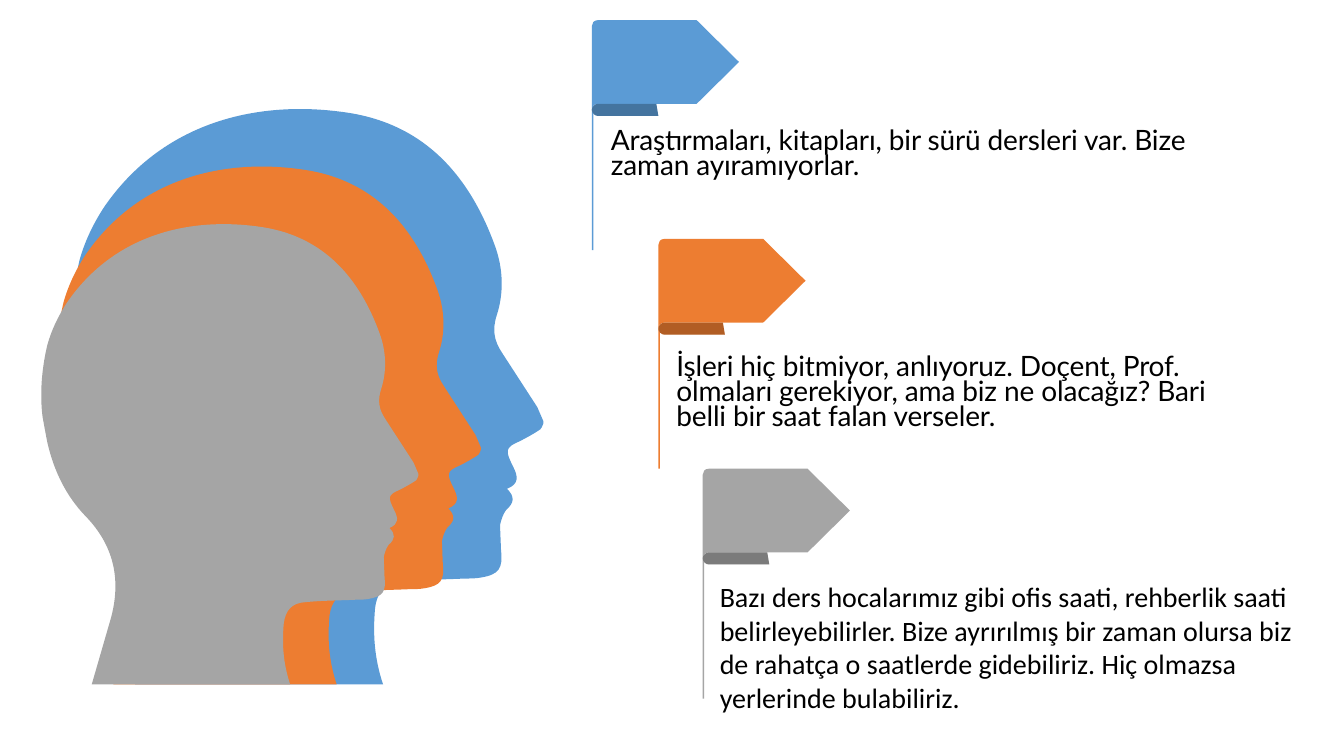
from dataclasses import dataclass
from typing import Optional

from lxml import etree
from pptx import Presentation
from pptx import util as u
from pptx.dml.color import RGBColor
from pptx.enum import text
from pptx.oxml import ns

CELL = u.Inches(0.01)  # one grid column or row
COLUMNS, ROWS = 1333, 750


@dataclass(frozen=True)
class Theme:
    blue: str = "5B9BD5"
    orange: str = "ED7D31"
    grey: str = "A5A5A5"
    black: str = "000000"
    shade_opacity: int = 25
    lato: str = "Lato"
    calibri: str = "Calibri"
    body_size: int = 20
    tight_line: int = 18
    tight_tracking: float = -0.1


THEME = Theme()


@dataclass(frozen=True)
class Head:
    column: int
    scale: float
    color: str


@dataclass(frozen=True)
class Complaint:
    words: str
    flag: tuple[int, int]
    box: tuple[int, int, int, int]
    color: str
    font: str = THEME.lato
    line: Optional[int] = THEME.tight_line
    tracking: float = THEME.tight_tracking


HEAD_BOTTOM, HEAD_ROWS = 679, 581
HEADS = [
    Head(69, 1.0, THEME.blue),
    Head(54, 0.9, THEME.orange),
    Head(39, 0.8, THEME.grey),
]

COMPLAINTS = [
    Complaint("Araştırmaları, kitapları, bir sürü dersleri var. Bize zaman ayıramıyorlar.",
              (587, 20), (596, 125, 592, 61), THEME.blue),
    Complaint("İşleri hiç bitmiyor, anlıyoruz. Doçent, Prof. olmaları gerekiyor, ama biz ne "
              "olacağız? Bari belli bir saat falan verseler.",
              (653, 237), (661, 349, 597, 86), THEME.orange),
    Complaint("Bazı ders hocalarımız gibi ofis saati, rehberlik saati belirleyebilirler. Bize "
              "ayrırılmış bir zaman olursa biz de rahatça o saatlerde gidebiliriz. Hiç olmazsa "
              "yerlerinde bulabiliriz.",
              (697, 465), (704, 570, 588, 145), THEME.grey, THEME.calibri, None, 0),
]

# Outlines in cells: a pair is a line's end, six numbers are a Bézier curve.
Outline = list[tuple[float, ...]]

POLE: Outline = [(0, 228), (1.5, 228), (1.5, 92), (0, 89)]
BANNER: Outline = [
    (104, 0), (6, 0), (2, 0, 0, 3, 0, 6), (0, 89), (0, 86, 2, 83, 6, 83),
    (104, 83), (146, 41.5),
]
FOLD: Outline = [
    (6, 83), (64, 83), (66, 95), (6, 95), (3, 95, 0, 92, 0, 89), (0, 86, 3, 83, 6, 83),
]
PROFILE: Outline = [
    (470, 320), (464, 306), (429, 252), (421, 240, 419, 229, 424, 214),
    (431, 192, 430, 168, 422, 146), (397, 77, 353, 26, 277, 14),
    (187, 0, 92, 23, 34, 108), (23, 125, 15, 142, 10, 160),
    (0, 202, 2, 233, 4, 249), (6, 260, 8, 271, 10, 281),
    (18, 316, 33, 347, 57, 372), (95, 411, 102, 456, 87, 505),
    (65, 581), (311, 581), (302, 554, 301, 530, 303, 506),
    (305, 489, 313, 480, 330, 479), (350, 477, 371, 477, 392, 476),
    (397, 476, 403, 476, 408, 475), (426, 472, 430, 466, 428, 448),
    (427, 423), (428, 418, 430, 412, 433, 408), (441, 401, 442, 395, 434, 387),
    (446, 382, 445, 375, 440, 365), (432, 349, 432, 346, 446, 340),
    (454, 336, 461, 332, 467, 328), (467, 327, 470, 325, 470, 322),
]


def bend_lines(figure, outline: Outline, column: float, row: float, scale: float) -> None:
    """Replace each straight segment by its Bézier curve where the outline has one."""
    lines = list(figure._element.iter(ns.qn("a:lnTo")))
    for line, segment in zip(lines, outline[1:]):
        if len(segment) == 2:
            continue
        curve = etree.Element(ns.qn("a:cubicBezTo"))
        for x, y in zip(segment[::2], segment[1::2]):
            point = etree.SubElement(curve, ns.qn("a:pt"))
            point.set("x", str(round((column + x * scale) * CELL) - figure.left))
            point.set("y", str(round((row + y * scale) * CELL) - figure.top))
        line.getparent().replace(line, curve)


def draw_outline(slide, outline: Outline, column: float, row: float, color: str,
                 scale: float = 1, opacity: int = 100) -> None:
    corners = [((column + segment[-2] * scale) * CELL, (row + segment[-1] * scale) * CELL)
               for segment in outline]
    builder = slide.shapes.build_freeform(*corners[0])
    builder.add_line_segments(corners[1:], close=True)
    figure = builder.convert_to_shape()
    bend_lines(figure, outline, column, row, scale)
    figure.shadow.inherit = False
    figure.line.fill.background()
    figure.fill.solid()
    figure.fill.fore_color.rgb = RGBColor.from_string(color)
    if opacity < 100:
        tint = figure._element.spPr.find(".//" + ns.qn("a:srgbClr"))
        etree.SubElement(tint, ns.qn("a:alpha")).set("val", str(opacity * 1000))


def write(slide, words: str, box: tuple[int, int, int, int], *, font: str, size: int,
          color: str, line: Optional[int] = None, tracking: float = 0) -> None:
    frame = slide.shapes.add_textbox(*(cells * CELL for cells in box)).text_frame
    frame.word_wrap = True
    frame.auto_size = text.MSO_AUTO_SIZE.SHAPE_TO_FIT_TEXT
    paragraph = frame.paragraphs[0]
    if line:
        paragraph.line_spacing = u.Pt(line)
    run = paragraph.add_run()
    run.text = words
    run.font.name = font
    run.font.size = u.Pt(size)
    run.font.color.rgb = RGBColor.from_string(color)
    if tracking:
        run._r.get_or_add_rPr().set("spc", str(round(tracking * 100)))


def main() -> None:
    deck = Presentation()
    deck.slide_width, deck.slide_height = COLUMNS * CELL, ROWS * CELL
    slide = deck.slides.add_slide(deck.slide_layouts[6])

    for complaint in COMPLAINTS:
        for part in (POLE, BANNER, FOLD):
            draw_outline(slide, part, *complaint.flag, complaint.color)
    for head in HEADS:
        draw_outline(slide, PROFILE, head.column, HEAD_BOTTOM - HEAD_ROWS * head.scale,
                     head.color, scale=head.scale)
    for complaint in COMPLAINTS:
        draw_outline(slide, FOLD, *complaint.flag, THEME.black, opacity=THEME.shade_opacity)
    for complaint in COMPLAINTS:
        write(slide, complaint.words, complaint.box, font=complaint.font,
              size=THEME.body_size, color=THEME.black, line=complaint.line,
              tracking=complaint.tracking)

    deck.save("out.pptx")


if __name__ == "__main__":
    main()
